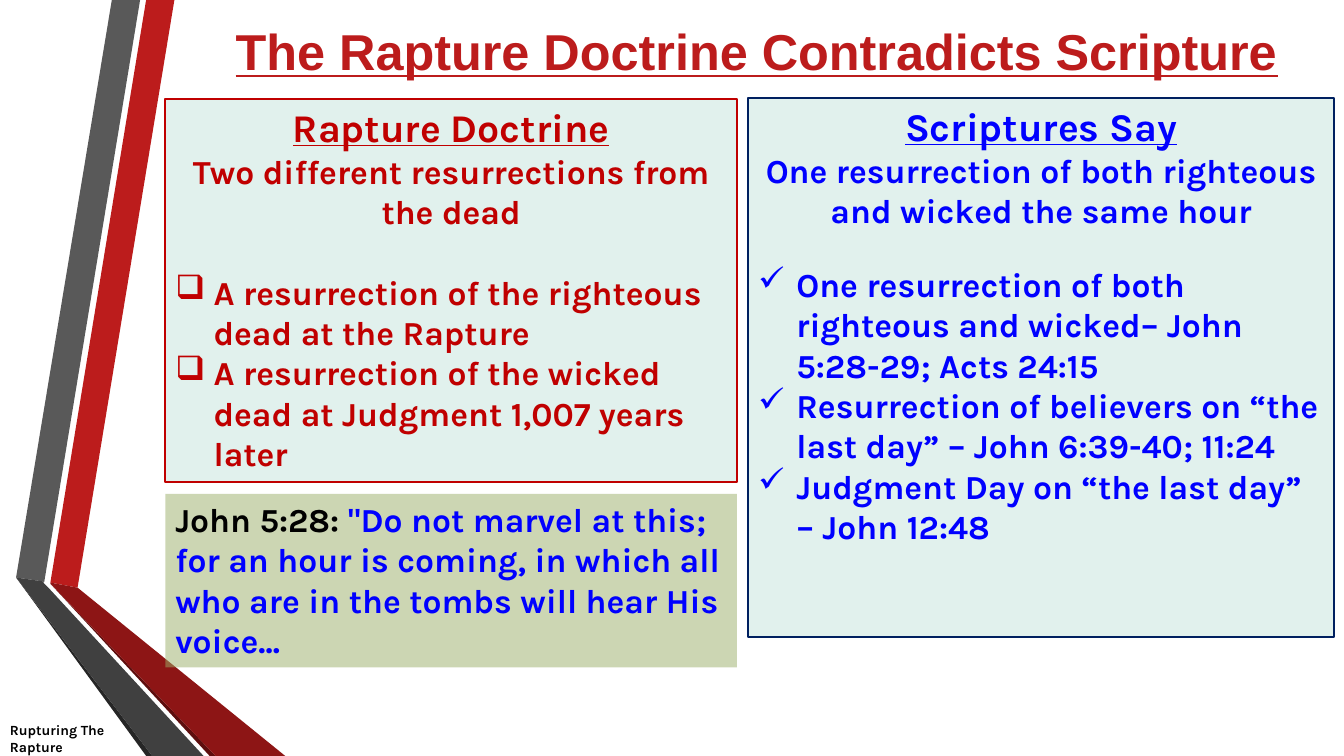
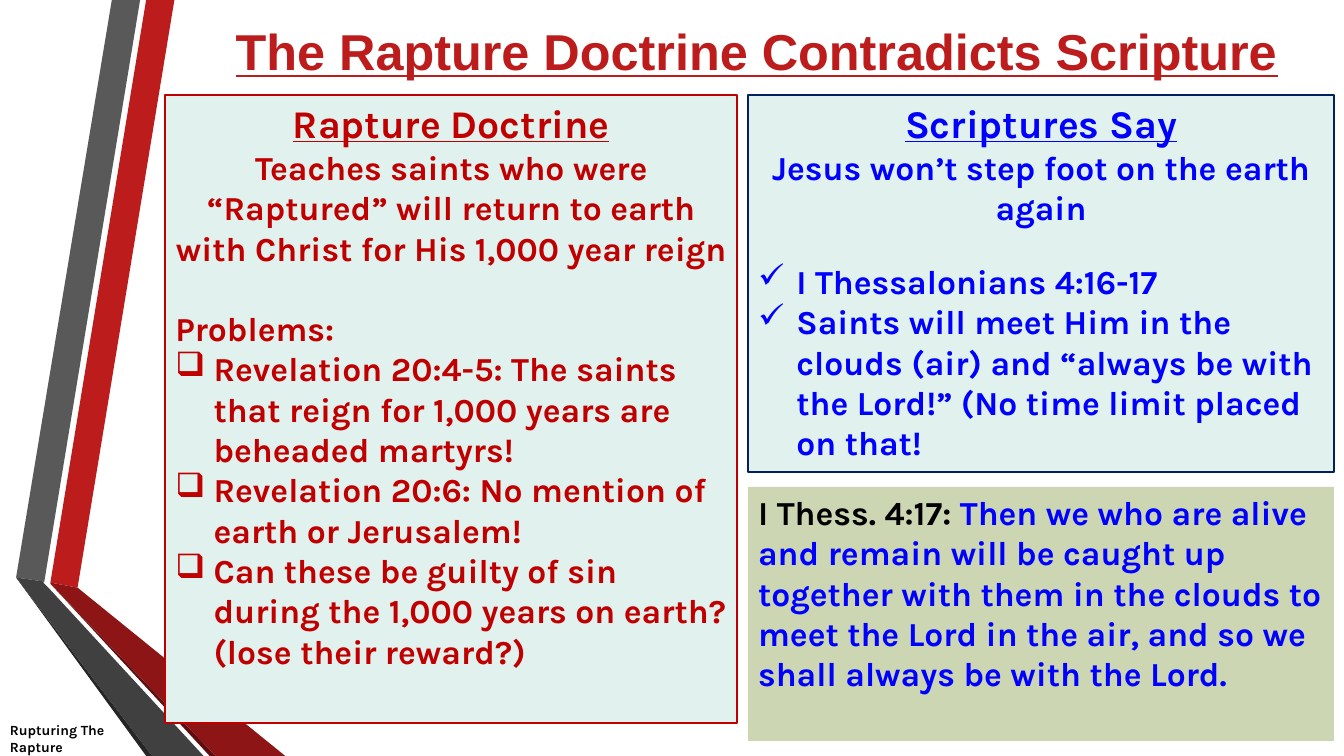
from lxml.etree import SubElement
from pptx import Presentation
from pptx.dml.color import RGBColor
from pptx.enum.shapes import MSO_SHAPE
from pptx.enum.text import MSO_ANCHOR, PP_ALIGN
from pptx.oxml.ns import qn
from pptx.util import Inches, Pt

HUES = {
    "red": "BC1C1C", "gray": "595959", "coal": "262626", "wine": "5E0E0E",
    "brick": "8D1515", "slate": "404040", "mint": "E1F1ED", "moss": "9BAF68",
    "rust": "C00000", "navy": "002060", "blue": "0000FF", "black": "000000",
}
BANDS = [
    ("red", [(0.5, 5.78), (0.77, 5.83), (1.73, 0), (1.45, 0)]),
    ("gray", [(1.39, 0), (1.11, 0), (0.16, 5.73), (0.44, 5.77)]),
    ("coal", [(0.16, 5.73), (1.45, 7.5), (1.51, 7.5)]),
    ("wine", [(0.5, 5.79), (2.08, 7.5), (2.14, 7.5)]),
    ("brick", [(0.5, 5.79), (2.14, 7.5), (2.83, 7.5), (0.77, 5.83), (0.5, 5.78)]),
    ("slate", [(2.02, 7.5), (0.48, 5.83), (0.43, 5.78), (0.44, 5.77),
               (0.16, 5.73), (1.51, 7.5)]),
]
SIDES = {
    "left": dict(x=1.64, wide=5.67, head="Rapture Doctrine",
                 ink="rust", edge="rust", mark="❑", gap=28.8),
    "right": dict(x=7.42, wide=5.81, head="Scriptures Say",
                  ink="blue", edge="navy", mark="✓", gap=24),
}


def hue(name):
    return RGBColor.from_string(HUES[name])


class Deck:
    def __init__(self):
        self.file = Presentation()
        self.file.slide_width = Inches(13.33)
        self.file.slide_height = Inches(7.5)
        self.slide = None

    def start(self, title):
        self.slide = self.file.slides.add_slide(self.file.slide_layouts[6])
        for ink, points in BANDS:
            self.band(ink, points)
        frame = self.label(1.67, 0, 11.67, 1)
        self.para(frame, [(title, "red")], 36, font="Arial",
                  under=True, align=PP_ALIGN.CENTER)
        frame = self.label(0, 7.15, 10, 0.35)
        for line in ("Rupturing The", "Rapture"):
            self.para(frame, [(line, "black")], 10)

    def paint(self, shape, fill, edge=None):
        shape.shadow.inherit = False
        shape.fill.solid()
        shape.fill.fore_color.rgb = hue(fill)
        if edge:
            shape.line.color.rgb = hue(edge)
            shape.line.width = Pt(1.5)
        else:
            shape.line.fill.background()

    def band(self, ink, points):
        spots = [(Inches(x), Inches(y)) for x, y in points]
        form = self.slide.shapes.build_freeform(*spots[0], scale=1.0)
        form.add_line_segments(spots[1:], close=True)
        self.paint(form.convert_to_shape(), ink)

    def label(self, x, y, wide, high):
        box = self.slide.shapes.add_textbox(
            Inches(x), Inches(y), Inches(wide), Inches(high))
        box.text_frame.word_wrap = True
        box.text_frame.vertical_anchor = MSO_ANCHOR.MIDDLE
        return box.text_frame

    def block(self, side, y, high, fill, edge=None):
        box = self.slide.shapes.add_shape(
            MSO_SHAPE.RECTANGLE, Inches(side["x"]), Inches(y),
            Inches(side["wide"]), Inches(high))
        self.paint(box, fill, edge)
        box.text_frame.word_wrap = True
        box.text_frame.vertical_anchor = MSO_ANCHOR.TOP
        return box

    def para(self, frame, runs, size=24, font="Karla", under=False,
             align=PP_ALIGN.LEFT, gap=0, mark=None):
        para = frame.paragraphs[0]
        if para.runs:
            para = frame.add_paragraph()
        if mark:
            props = para._p.get_or_add_pPr()
            props.set("marL", str(Inches(0.38)))
            props.set("indent", str(Inches(-0.38)))
            SubElement(props, qn("a:buChar")).set("char", mark)
        para.alignment = align
        if gap:
            para.space_before = Pt(gap)
        for text, ink in runs:
            run = para.add_run()
            run.text = text
            run.font.name = font
            run.font.size = Pt(size)
            run.font.bold = True
            run.font.underline = under
            run.font.color.rgb = hue(ink)

    def panel(self, name, y, high, lead, items, intro=None):
        side = SIDES[name]
        ink, gap = side["ink"], side["gap"]
        frame = self.block(side, y, high, "mint", side["edge"]).text_frame
        self.para(frame, [(side["head"], ink)], 28, under=True,
                  align=PP_ALIGN.CENTER)
        self.para(frame, [(lead, ink)], align=PP_ALIGN.CENTER)
        if intro:
            self.para(frame, [(intro, ink)], gap=gap)
            gap = 0
        for item in items:
            self.para(frame, [(item, ink)], gap=gap, mark=side["mark"])
            gap = 0

    def quote(self, name, y, high, verse, text):
        box = self.block(SIDES[name], y, high, "moss")
        tint = next(box.element.spPr.iter(qn("a:srgbClr")))
        SubElement(tint, qn("a:alpha")).set("val", "50000")
        self.para(box.text_frame, [(verse + " ", "black"), (text, "blue")])


def main():
    title = "The Rapture Doctrine Contradicts Scripture"
    deck = Deck()

    deck.start(title)
    deck.panel("left", 0.98, 3.8, "Two different resurrections from the dead", [
        "A resurrection of the righteous dead at the Rapture",
        "A resurrection of the wicked dead at Judgment 1,007 years later",
    ])
    deck.panel("right", 0.97, 5.35,
               "One resurrection of both righteous and wicked the same hour", [
                   "One resurrection of both righteous and wicked– John 5:28-29; Acts 24:15",
                   "Resurrection of believers on “the last day” – John 6:39-40; 11:24",
                   "Judgment Day on “the last day” – John 12:48",
               ])
    deck.quote("left", 4.9, 1.72, "John 5:28:",
               "\"Do not marvel at this; for an hour is coming, in which all "
               "who are in the tombs will hear His voice...")

    deck.start(title)
    deck.panel("left", 0.94, 6.23,
               "Teaches saints who were “Raptured” will return to earth "
               "with Christ for His 1,000 year reign", [
                   "Revelation 20:4-5: The saints that reign for 1,000 years "
                   "are beheaded martyrs!",
                   "Revelation 20:6: No mention of earth or Jerusalem!",
                   "Can these be guilty of sin during the 1,000 years on earth? "
                   "(lose their reward?)",
               ], intro="Problems:")
    deck.panel("right", 0.94, 3.74, "Jesus won’t step foot on the earth again", [
        "I Thessalonians 4:16-17",
        "Saints will meet Him in the clouds (air) and “always be with the Lord!” "
        "(No time limit placed on that!",
    ])
    deck.quote("right", 4.83, 2.52, "I Thess. 4:17:",
               "Then we who are alive and remain will be caught up together with "
               "them in the clouds to meet the Lord in the air, and so we shall "
               "always be with the Lord.")

    deck.file.save("out.pptx")


if __name__ == "__main__":
    main()
